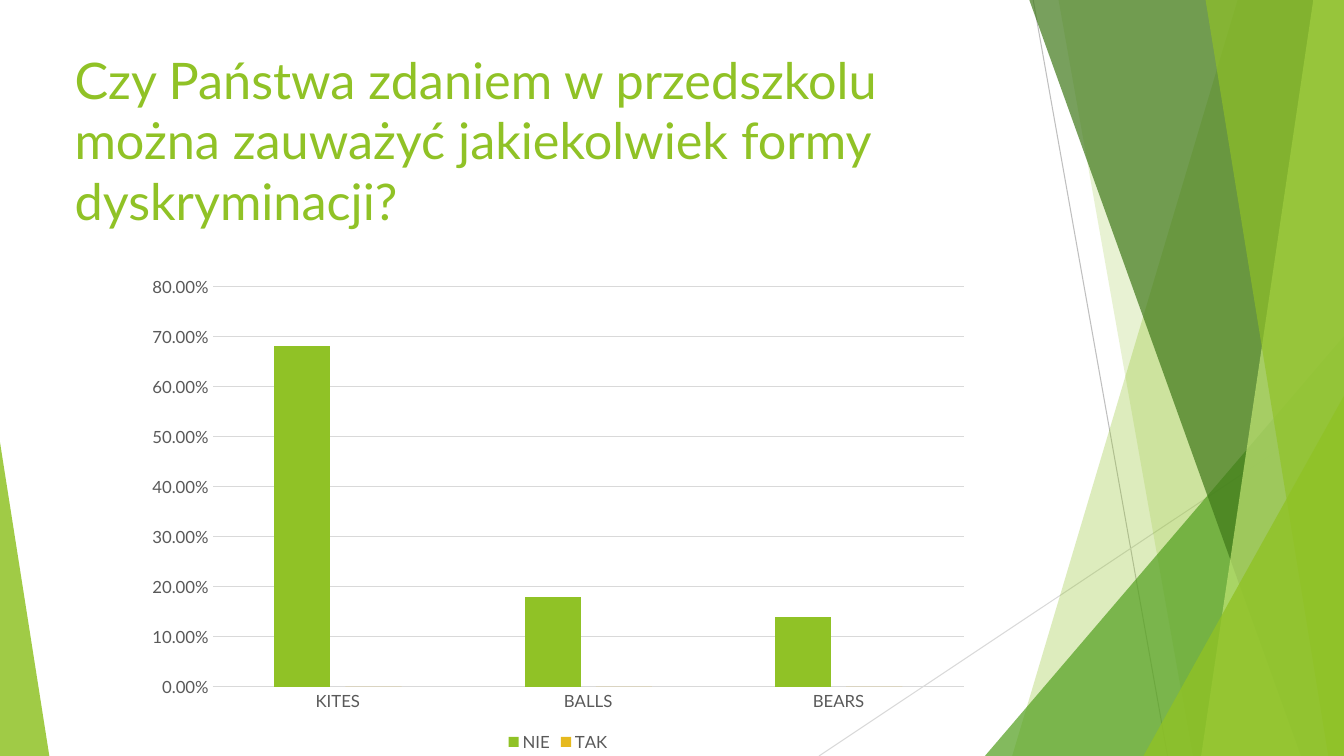
"""Build a survey slide with a column chart and translucent green facets."""
from typing import NamedTuple

from lxml import etree
from pptx import Presentation
from pptx.chart.data import CategoryChartData
from pptx.dml.color import RGBColor
from pptx.enum.chart import XL_CHART_TYPE, XL_LEGEND_POSITION, XL_TICK_MARK
from pptx.enum.shapes import MSO_CONNECTOR, MSO_SHAPE
from pptx.enum.text import MSO_ANCHOR
from pptx.oxml.ns import qn
from pptx.util import Pt

COLUMNS = XL_CHART_TYPE.COLUMN_CLUSTERED
LEGEND_BOTTOM = XL_LEGEND_POSITION.BOTTOM
NO_TICK = XL_TICK_MARK.NONE
STRAIGHT = MSO_CONNECTOR.STRAIGHT
TRIANGLE = MSO_SHAPE.ISOSCELES_TRIANGLE
MIDDLE = MSO_ANCHOR.MIDDLE

EMU_PER_PX = 9525
SLIDE_W, SLIDE_H = 1280, 720
BAND_TOP = -1
FONT = "Lato"

LIME = RGBColor(0x90, 0xC2, 0x26)
LEAF = RGBColor(0x54, 0xA0, 0x21)
FOREST = RGBColor(0x3F, 0x78, 0x19)
PALE_LIME = RGBColor(0xC0, 0xE4, 0x74)
GOLD = RGBColor(0xE6, 0xB9, 0x1E)
MID_GRAY = RGBColor(0xBF, 0xBF, 0xBF)
LIGHT_GRAY = RGBColor(0xD9, 0xD9, 0xD9)
LABEL_GRAY = RGBColor(0x59, 0x59, 0x59)

QUESTION = ("Czy Państwa zdaniem w przedszkolu można zauważyć "
            "jakiekolwiek formy dyskryminacji?")
GROUPS = ("KITES", "BALLS", "BEARS")


class Ray(NamedTuple):
    """A thin line between two points."""
    x1: int
    y1: int
    x2: int
    y2: int
    color: RGBColor


class Band(NamedTuple):
    """A full-height facet reaching the right slide edge."""
    top_x: int
    bottom_x: int
    color: RGBColor
    opacity: int


class Wedge(NamedTuple):
    """A right triangle standing on the bottom edge."""
    left: int
    top: int
    width: int
    apex: int
    color: RGBColor
    opacity: int


class Answer(NamedTuple):
    """One answer's share in each group."""
    name: str
    shares: tuple[float, ...]
    color: RGBColor


RAYS = (
    Ray(984, 0, 1112, SLIDE_H, MID_GRAY),
    Ray(SLIDE_W, 387, 780, SLIDE_H, LIGHT_GRAY),
)
FACETS = (
    Band(1179, 964, LIME, 30),
    Band(1008, 1136, LIME, 20),
    Wedge(938, 320, 342, 1, LEAF, 72),
    Band(980, 1239, FOREST, 70),
    Band(1251, 1144, PALE_LIME, 70),
    Band(1148, 1265, LIME, 65),
    Wedge(1089, 377, 191, 1, LIME, 80),
    Wedge(0, 421, 47, 0, LIME, 85),
)
ANSWERS = (
    Answer("NIE", (0.68, 0.18, 0.14), LIME),
    Answer("TAK", (0, 0, 0), GOLD),
)


def px(*lengths: int) -> list[int]:
    """Convert pixel lengths to EMU."""
    return [length * EMU_PER_PX for length in lengths]


def draw_ray(slide, ray: Ray) -> None:
    """Draw one shadowless line."""
    connector = slide.shapes.add_connector(STRAIGHT, *px(*ray[:4]))
    connector.line.color.rgb = ray.color
    connector.line.width = Pt(0.75)
    etree.SubElement(connector._element.spPr, qn("a:effectLst"))


def draw_facet(slide, facet: Band | Wedge) -> None:
    """Draw one translucent facet."""
    if isinstance(facet, Band):
        builder = slide.shapes.build_freeform(facet.top_x, BAND_TOP, EMU_PER_PX)
        builder.add_line_segments(
            [(SLIDE_W, BAND_TOP), (SLIDE_W, SLIDE_H), (facet.bottom_x, SLIDE_H)])
        shape = builder.convert_to_shape()
    else:
        shape = slide.shapes.add_shape(
            TRIANGLE, *px(facet.left, facet.top, facet.width, SLIDE_H - facet.top))
        shape.adjustments[0] = facet.apex
    shape.shadow.inherit = False
    shape.line.fill.background()
    shape.fill.solid()
    shape.fill.fore_color.rgb = facet.color
    color_node = shape._element.spPr.find(qn("a:solidFill"))[0]
    etree.SubElement(color_node, qn("a:alpha"), val=str(facet.opacity * 1000))


def style_font(font, size: int, color: RGBColor) -> None:
    """Apply the slide typeface with a size and colour."""
    font.name = FONT
    font.size = Pt(size)
    font.color.rgb = color


def draw_question(slide) -> None:
    """Write the survey question."""
    frame = slide.shapes.add_textbox(*px(71, 64, 902, 138)).text_frame
    frame.word_wrap = True
    frame.vertical_anchor = MIDDLE
    frame.margin_left = frame.margin_right = 0
    frame.margin_top = frame.margin_bottom = 0
    frame.text = QUESTION
    style_font(frame.paragraphs[0].runs[0].font, 36, LIME)


def draw_answers(slide) -> None:
    """Chart the answers by group."""
    data = CategoryChartData(number_format="0.00%")
    data.categories = GROUPS
    for answer in ANSWERS:
        data.add_series(answer.name, answer.shares)
    chart = slide.shapes.add_chart(COLUMNS, *px(129, 254, 805, 466), data).chart
    style_font(chart.font, 12, LABEL_GRAY)
    chart.has_title = False
    chart.has_legend = True
    chart.legend.position = LEGEND_BOTTOM
    chart.legend.include_in_layout = False
    style_font(chart.legend.font, 12, LABEL_GRAY)

    plot = chart.plots[0]
    plot.gap_width = 219
    plot.overlap = -27
    plot.vary_by_categories = False
    for series, answer in zip(plot.series, ANSWERS):
        series.format.fill.solid()
        series.format.fill.fore_color.rgb = answer.color

    groups, shares = chart.category_axis, chart.value_axis
    for axis in (groups, shares):
        axis.major_tick_mark = axis.minor_tick_mark = NO_TICK
        style_font(axis.tick_labels.font, 12, LABEL_GRAY)
    shares.minimum_scale, shares.maximum_scale = 0, 0.8
    shares.major_unit = 0.1
    shares.tick_labels.number_format = "0.00%"
    shares.tick_labels.number_format_is_linked = False
    shares.format.line.fill.background()
    for line in (groups.format.line, shares.major_gridlines.format.line):
        line.color.rgb = LIGHT_GRAY
        line.width = Pt(0.75)


def main() -> None:
    """Assemble and save the slide."""
    deck = Presentation()
    deck.slide_width, deck.slide_height = px(SLIDE_W, SLIDE_H)
    slide = deck.slides.add_slide(deck.slide_layouts[6])
    for ray in RAYS:
        draw_ray(slide, ray)
    for facet in FACETS:
        draw_facet(slide, facet)
    draw_question(slide)
    draw_answers(slide)
    deck.save("out.pptx")


if __name__ == "__main__":
    main()
